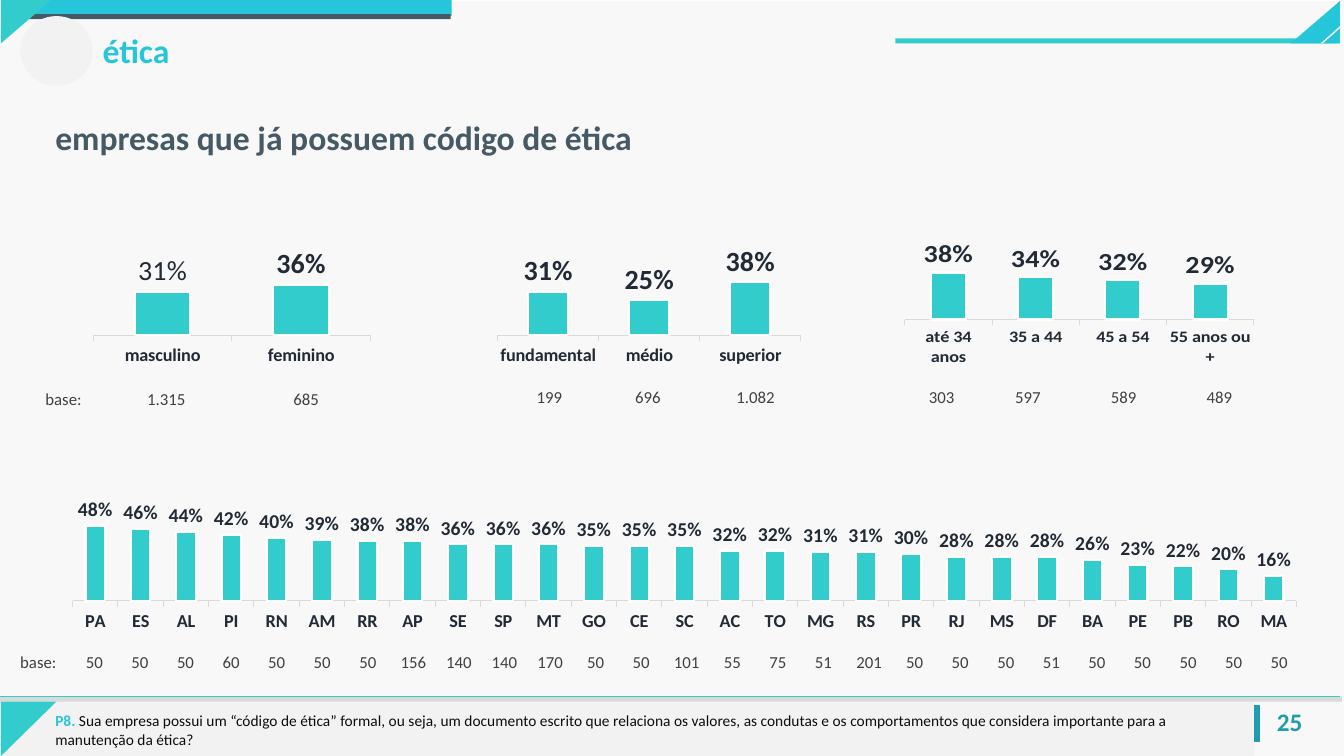
from lxml import etree
from pptx import Presentation
from pptx import util as u
from pptx.chart.data import CategoryChartData
from pptx.dml.color import RGBColor
from pptx.enum import chart as ch, dml, shapes, text
from pptx.oxml import ns

WHITE = RGBColor(0xFF, 0xFF, 0xFF)
PAPER = RGBColor(0xF8, 0xF8, 0xF8)
PALE = RGBColor(0xF2, 0xF2, 0xF2)
RULE = RGBColor(0xD9, 0xD9, 0xD9)
CYAN = RGBColor(0x26, 0xC6, 0xDA)
TEAL = RGBColor(0x33, 0xCC, 0xCC)
DEEP = RGBColor(0x1E, 0x9D, 0xAE)
SLATE = RGBColor(0x45, 0x5A, 0x64)
NAVY = RGBColor(0x22, 0x2A, 0x35)
GREY = RGBColor(0x40, 0x40, 0x40)
INK = RGBColor(0x0D, 0x0D, 0x0D)

NO_TABLE_STYLE = "{2D5ABB26-0587-4C30-8999-92F81FD0307C}"
PLOT_AREA = {"x": 0.036, "y": 0.167, "w": 0.928, "h": 0.659}
LEFT, CENTER = text.PP_ALIGN.LEFT, text.PP_ALIGN.CENTER


class Deck:
    font = "Calibri"

    def __init__(self, prs):
        self.s = prs.slides.add_slide(prs.slide_layouts[6])

    def style(self, font, size, color, bold=False):
        font.name, font.size, font.bold = self.font, u.Pt(size), bold
        font.color.rgb = color

    def shape(self, box, color, kind=shapes.MSO_SHAPE.RECTANGLE):
        sp = self.s.shapes.add_shape(kind, *map(u.Inches, box))
        return self.paint(sp, color)

    def paint(self, sp, color):
        sp.shadow.inherit = False
        sp.fill.solid()
        sp.fill.fore_color.rgb = color
        sp.line.fill.background()
        return sp

    def polygon(self, points, color):
        pts = [(u.Inches(x), u.Inches(y)) for x, y in points]
        fb = self.s.shapes.build_freeform(*pts[0])
        fb.add_line_segments(pts[1:], close=True)
        self.paint(fb.convert_to_shape(), color)

    def line(self, x1, y1, x2, y2, color, width):
        cx = self.s.shapes.add_connector(
            shapes.MSO_CONNECTOR.STRAIGHT, *map(u.Inches, (x1, y1, x2, y2)))
        cx.line.color.rgb, cx.line.width = color, u.Pt(width)
        etree.SubElement(cx.element.spPr, ns.qn("a:effectLst"))

    def text(self, box, runs, size, align=LEFT, wrap=True):
        """Each run is (wording, colour, bold)."""
        tf = self.s.shapes.add_textbox(*map(u.Inches, box)).text_frame
        tf.word_wrap = wrap
        tf.auto_size = text.MSO_AUTO_SIZE.SHAPE_TO_FIT_TEXT
        p = tf.paragraphs[0]
        p.alignment = align
        for words, color, bold in runs:
            r = p.add_run()
            r.text = words
            self.style(r.font, size, color, bold)

    def table(self, left, top, widths, values, align=CENTER, indents=None, tight=False):
        """One row of bases; indents maps a column to its left margin."""
        gf = self.s.shapes.add_table(1, len(values), *map(
            u.Inches, (left, top, sum(widths), 0.37)))
        next(gf.element.iter(ns.qn("a:tableStyleId"))).text = NO_TABLE_STYLE
        table = gf.table
        table.first_row = table.horz_banding = False
        for i, (width, value) in enumerate(zip(widths, values)):
            table.columns[i].width = u.Inches(width)
            cell = table.cell(0, i)
            cell.fill.background()
            is_head = value == "base:"
            if tight and not is_head:
                cell.margin_left = cell.margin_right = cell.margin_top = u.Inches(0.01)
                cell.margin_bottom = 0
                cell.vertical_anchor = text.MSO_ANCHOR.MIDDLE
            if indents and i in indents:
                cell.margin_left = u.Inches(indents[i])
            p = cell.text_frame.paragraphs[0]
            p.text = value
            p.alignment = LEFT if is_head else align
            p.line_spacing = 1.5
            self.style(p.runs[0].font, 12, GREY)

    def chart(self, box, cats, percents, label_size=20, gap=150, overlap=0):
        data = CategoryChartData(number_format="0%")
        data.categories = cats
        data.add_series("Series 1", [v / 100 for v in percents])
        chart = self.s.shapes.add_chart(
            ch.XL_CHART_TYPE.COLUMN_CLUSTERED, *map(u.Inches, box), data).chart
        chart.has_legend = chart.has_title = False
        chart.font.name, chart.font.size = self.font, u.Pt(10)

        # Axes
        axis = chart.category_axis
        axis.major_tick_mark = ch.XL_TICK_MARK.OUTSIDE
        axis.format.line.color.rgb, axis.format.line.width = RULE, u.Pt(0.75)
        self.style(axis.tick_labels.font, 13, NAVY, True)
        scale = chart.value_axis
        scale.minimum_scale, scale.maximum_scale = 0, 0.8
        scale.has_major_gridlines = scale.visible = False

        # Columns and labels
        plot = chart.plots[0]
        plot.gap_width, plot.overlap, plot.vary_by_categories = gap, overlap, False
        series = plot.series[0]
        series.format.fill.solid()
        series.format.fill.fore_color.rgb = TEAL
        series.format.line.color.rgb, series.format.line.width = WHITE, u.Pt(1.5)
        labels = series.data_labels
        labels.show_value = True
        labels.number_format, labels.number_format_is_linked = "0%", False
        labels.position = ch.XL_LABEL_POSITION.OUTSIDE_END
        self.style(labels.font, label_size, NAVY, True)

        # Fixed inner plot area
        area = next(chart.element.iter(ns.qn("c:plotArea")))
        for old in area.findall(ns.qn("c:layout")):
            area.remove(old)
        layout = etree.Element(ns.qn("c:layout"))
        manual = etree.SubElement(layout, ns.qn("c:manualLayout"))
        settings = {"layoutTarget": "inner", "xMode": "edge", "yMode": "edge", **PLOT_AREA}
        for tag, value in settings.items():
            etree.SubElement(manual, ns.qn("c:" + tag)).set("val", str(value))
        area.insert(0, layout)
        return series


def main():
    prs = Presentation()
    prs.slide_width, prs.slide_height = u.Inches(13.33), u.Inches(7.5)
    d = Deck(prs)

    # Background and frame
    fill = d.shape((0, 0, 13.33, 7.5), PAPER).fill
    fill.patterned()
    fill.pattern = dml.MSO_PATTERN.DARK_HORIZONTAL
    fill.fore_color.rgb, fill.back_color.rgb = PAPER, WHITE
    d.shape((0, 6.96, 12.44, 0.54), PALE)
    d.shape((0.09, 0, 4.39, 0.16), CYAN)
    d.shape((-0.01, 6.91, 13.32, 0.05), RULE)
    d.shape((0.23, 0.14, 4.24, 0.05), SLATE)
    d.polygon([(0.01, 0), (0.51, 0), (0.01, 0.43)], TEAL)
    d.shape((8.88, 0.38, 4.39, 0.05), TEAL)
    d.polygon([(13.29, 0.01), (12.8, 0.43), (13.29, 0.43)], CYAN)
    d.polygon([(13.29, 0.28), (13.29, 0.26), (13.1, 0.43), (13.12, 0.43)], WHITE)
    d.polygon([(0.01, 6.96), (0.56, 6.96), (0.01, 7.5)], TEAL)
    d.line(-0.04, 6.91, 13.29, 6.91, TEAL, 0.5)

    # Page number
    d.text((12.48, 6.96, 0.62, 0.4), [("25", DEEP, True)], 18, CENTER, wrap=False)
    bar = d.shape((12.44, 7, 0.05, 0.36), DEEP)
    bar.line.color.rgb, bar.line.width = DEEP, u.Pt(0.75)

    # Question and headings
    d.text((0.45, 7.01, 12.01, 0.47), [
        ("P8. ", CYAN, True),
        ("Sua empresa possui um “código de ética” formal, ou seja, um documento escrito "
         "que relaciona os valores, as condutas e os comportamentos que considera "
         "importante para a manutenção da ética?", INK, False)], 11)
    d.text((0.92, 0.25, 5.83, 0.5), [("ética", CYAN, True)], 24)
    d.text((0.45, 1.11, 12.23, 0.5),
           [("empresas que já possuem código de ética", SLATE, True)], 24)

    # Gender, with the first label in regular weight
    gender = d.chart((0.82, 1.94, 2.96, 1.7), ["masculino", "feminino"], [31, 36])
    label = gender.points[0].data_label
    d.style(label.font, 20, NAVY)
    label.position = ch.XL_LABEL_POSITION.OUTSIDE_END
    d.table(0.35, 3.71, [0.82, 1.64, 0.64], ["base:", "1.315", "685"], LEFT, {1: 0.29})

    # Age
    d.chart((8.84, 1.94, 3.73, 1.7),
            ["até 34 anos", "35 a 44", "45 a 54", "55 anos ou +"], [38, 34, 32, 29])
    d.table(8.77, 3.69, [0.95] * 4, ["303", "597", "589", "489"], indents={0: 0.29})

    # Schooling
    d.chart((4.82, 1.94, 3.24, 1.7), ["fundamental", "médio", "superior"], [31, 25, 38])
    d.table(4.82, 3.69, [1.07] * 3, ["199", "696", "1.082"], indents={0: 0.29})

    # States
    states = ("PA ES AL PI RN AM RR AP SE SP MT GO CE SC AC TO MG RS PR RJ MS DF "
              "BA PE PB RO MA").split()
    shares = [48, 46, 44, 42, 40, 39, 38, 38, 36, 36, 36, 35, 35, 35,
              32, 32, 31, 31, 30, 28, 28, 28, 26, 23, 22, 20, 16]
    bases = ("50 50 50 60 50 50 50 156 140 140 170 50 50 101 55 75 51 201 50 50 50 51 "
             "50 50 50 50 50").split()
    d.chart((0.25, 4.4, 13.08, 1.89), states, shares, label_size=14, gap=132, overlap=97)
    d.table(0.1, 6.32, [0.61] + [12.21 / len(bases)] * len(bases),
            ["base:"] + bases, tight=True)

    # Section badge
    d.shape((0.2, 0.16, 0.72, 0.69), PALE, shapes.MSO_SHAPE.OVAL)

    prs.save("out.pptx")


if __name__ == "__main__":
    main()
